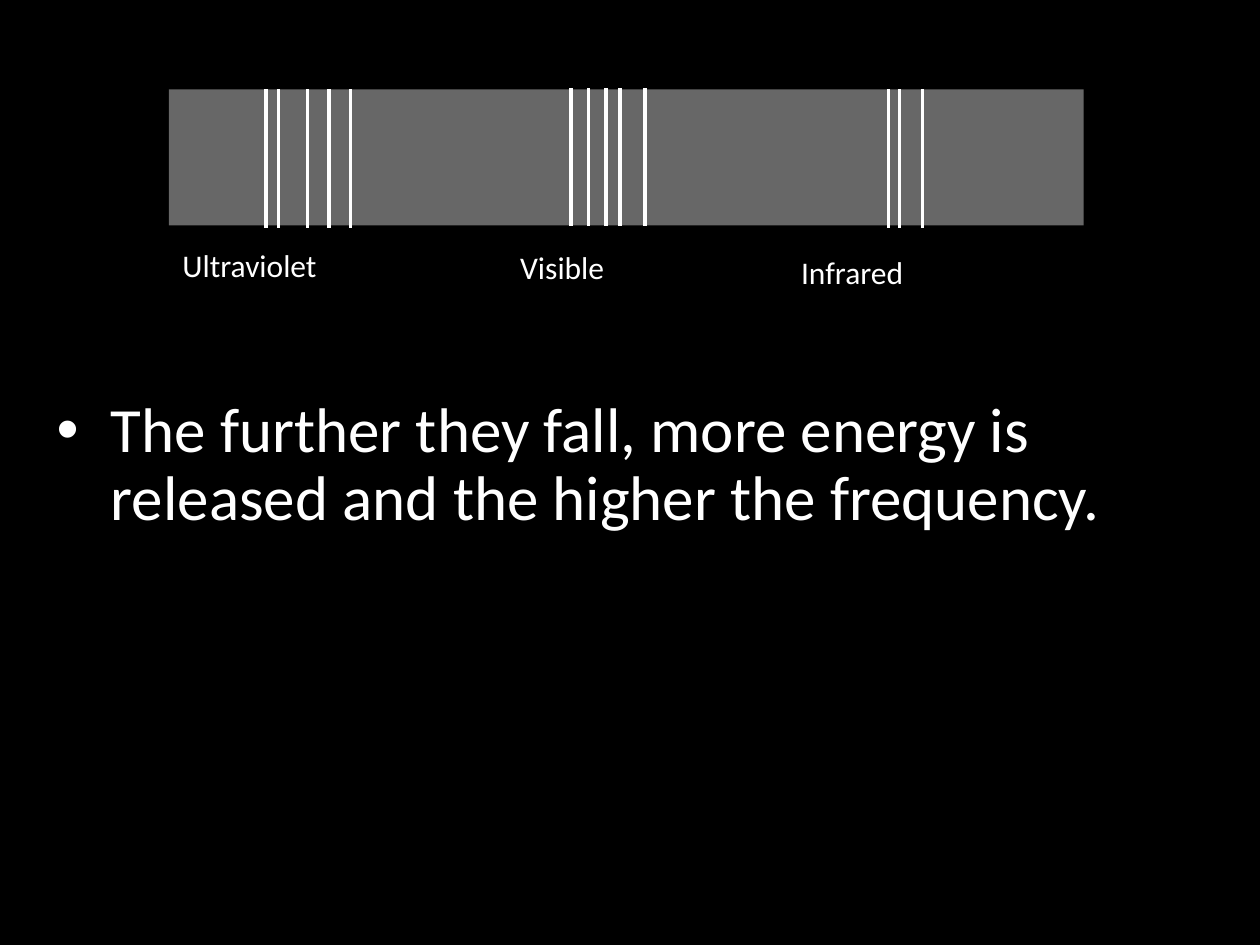
from pptx import Presentation
from pptx.dml.color import RGBColor
from pptx.enum.shapes import MSO_CONNECTOR, MSO_SHAPE
from pptx.enum.text import MSO_ANCHOR, MSO_AUTO_SIZE
from pptx.oxml.ns import qn
from pptx.util import Inches, Pt
from lxml import etree

RECTANGLE = MSO_SHAPE.RECTANGLE
STRAIGHT = MSO_CONNECTOR.STRAIGHT
FIT_TEXT = MSO_AUTO_SIZE.SHAPE_TO_FIT_TEXT
TOP = MSO_ANCHOR.TOP

BLACK = RGBColor(0x00, 0x00, 0x00)
GREY = RGBColor(0x67, 0x67, 0x67)
WHITE = RGBColor(0xFF, 0xFF, 0xFF)
FONT = "Calibri"

# Each series: label, label left, label top, top of lines, bottom of lines, x of lines
SERIES = [
    ("Ultraviolet", 1.35, 1.9, 0.71, 1.81, (2.11, 2.21, 2.44, 2.61, 2.78)),
    ("Visible", 4.03, 1.92, 0.7, 1.79, (4.53, 4.67, 4.81, 4.92, 5.12)),
    ("Infrared", 6.26, 1.96, 0.71, 1.81, (7.05, 7.14, 7.32)),
]


def format_text(tf, size):
    tf.word_wrap = True
    tf.auto_size = FIT_TEXT
    font = tf.paragraphs[0].runs[0].font
    font.name, font.size, font.color.rgb = FONT, Pt(size), WHITE


def fill_body(body, text):
    body.left, body.top = Inches(0.45), Inches(3.16)
    body.width, body.height = Inches(9), Inches(4.57)
    tf = body.text_frame
    tf.text = text
    tf.margin_left = tf.margin_right = tf.margin_top = tf.margin_bottom = 0
    tf.vertical_anchor = TOP
    p = tf.paragraphs[0]
    pPr = p._p.get_or_add_pPr()
    pPr.set("marL", str(Inches(0.43)))
    pPr.set("indent", str(Inches(-0.43)))
    etree.SubElement(pPr, qn("a:buChar")).set("char", "•")
    p.line_spacing = 0.9
    p.space_before = Pt(0)
    format_text(tf, 36)


def add_band(s):
    band = s.shapes.add_shape(RECTANGLE, Inches(1.34), Inches(0.71),
                              Inches(7.26), Inches(1.08))
    band.shadow.inherit = False
    band.fill.solid()
    band.fill.fore_color.rgb = GREY
    band.line.fill.background()


def add_spectral_line(s, x, top, bottom):
    line = s.shapes.add_connector(STRAIGHT, Inches(x), Inches(top),
                                  Inches(x), Inches(bottom))
    line.line.color.rgb = WHITE
    line.line.width = Pt(2)
    etree.SubElement(line._element.spPr, qn("a:effectLst"))


def add_label(s, text, left, top):
    label = s.shapes.add_textbox(Inches(left), Inches(top), Inches(2.43), Inches(0.63))
    label.text_frame.text = text
    format_text(label.text_frame, 18)


def main():
    prs = Presentation()
    prs.slide_width, prs.slide_height = Inches(10), Inches(7.5)
    s = prs.slides.add_slide(prs.slide_layouts[1])
    s.background.fill.solid()
    s.background.fill.fore_color.rgb = BLACK

    title = s.shapes.title._element
    title.getparent().remove(title)
    fill_body(s.placeholders[1],
              "The further they fall, more energy is released and the higher the frequency.")

    add_band(s)
    for label, left, label_top, top, bottom, xs in SERIES:
        for x in xs:
            add_spectral_line(s, x, top, bottom)
        add_label(s, label, left, label_top)

    prs.save("out.pptx")


if __name__ == "__main__":
    main()
